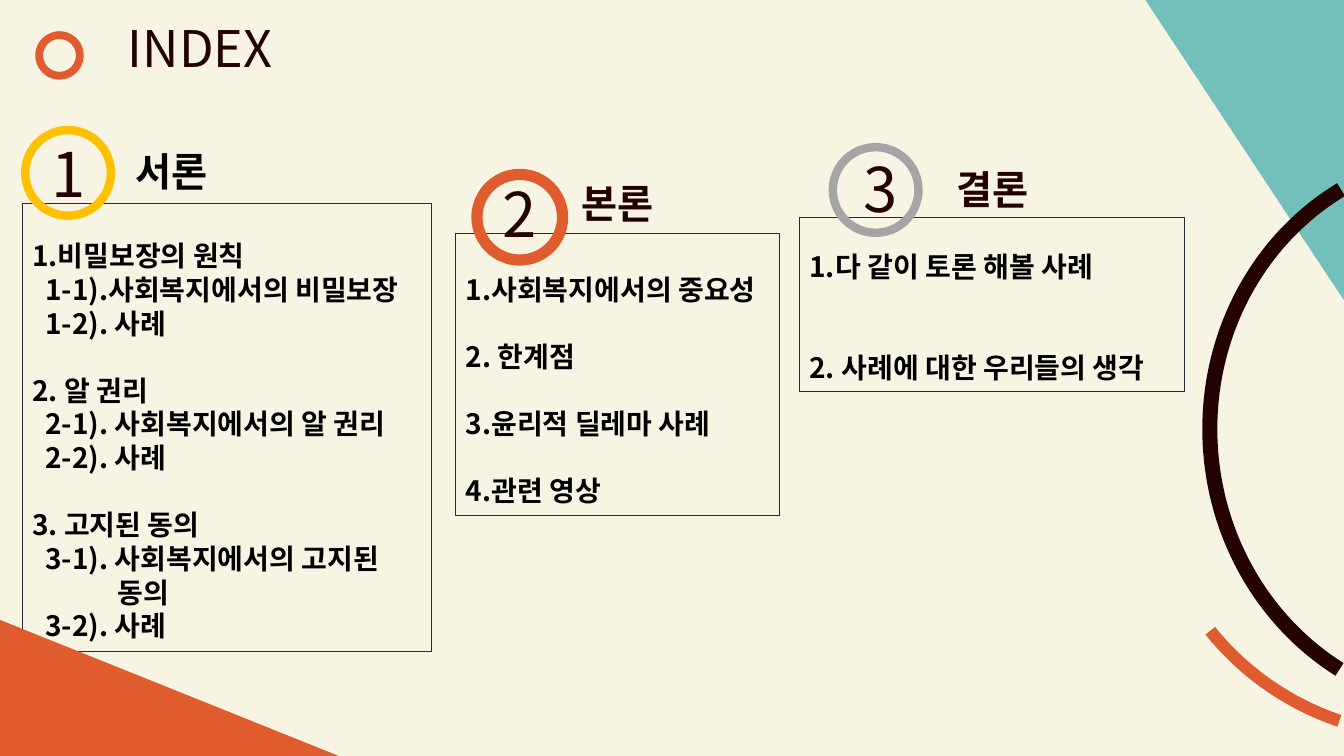
from dataclasses import dataclass

from lxml import etree
from pptx import Presentation
from pptx import util as u
from pptx.dml.color import RGBColor
from pptx.enum import shapes, text
from pptx.oxml.ns import qn

SHAPE = shapes.MSO_SHAPE
ALIGN = text.PP_ALIGN


@dataclass(frozen=True)
class Theme:
    font: str = "Noto Sans CJK KR"
    paper: str = "F7F4E3"
    ink: str = "240202"
    black: str = "000000"
    frame: str = "222A35"
    orange: str = "E05B2E"
    teal: str = "73C0BA"
    yellow: str = "FFC000"
    gray: str = "A5A5A5"
    title: int = 36
    number: int = 44
    heading: int = 28
    body: int = 20


THEME = Theme()
WIDTH, HEIGHT = 13.33, 7.5
LINE = 24  # height of one body line in points

# Each section: panel box, ring box, number box, heading box and its style,
# space above the list, and the entries as (level, space before in lines, words)
SECTIONS = [
    dict(number="1", heading="서론", ring_color=THEME.yellow, ring_width=6,
         panel=(0.22, 2.02, 4.06, 4.44), ring=(0.25, 1.29), number_box=(0.41, 1.3, 0.55),
         heading_box=(1.25, 1.41, 2.11), heading_color=THEME.black,
         heading_align=ALIGN.LEFT, top=0.35,
         entries=[(0, 0, "1.비밀보장의 원칙"),
                  (1, 0, "1-1).사회복지에서의 비밀보장"),
                  (1, 0, "1-2). 사례"),
                  (0, 1, "2. 알 권리"),
                  (1, 0, "2-1). 사회복지에서의 알 권리"),
                  (1, 0, "2-2). 사례"),
                  (0, 1, "3. 고지된 동의"),
                  (1, 0, "3-1). 사회복지에서의 고지된 동의"),
                  (1, 0, "3-2). 사례")]),
    dict(number="2", heading="본론", ring_color=THEME.orange, ring_width=8,
         panel=(4.52, 2.32, 3.21, 2.79), ring=(4.73, 1.73), number_box=(4.75, 1.7, 0.81),
         heading_box=(5.47, 1.73, 1.3), heading_color=THEME.ink,
         heading_align=ALIGN.CENTER, top=0.38,
         entries=[(0, 0, "1.사회복지에서의 중요성"),
                  (0, 1, "2. 한계점"),
                  (0, 1, "3.윤리적 딜레마 사례"),
                  (0, 1, "4.관련 영상")]),
    dict(number="3", heading="결론", ring_color=THEME.gray, ring_width=6,
         panel=(7.93, 2.16, 3.82, 1.72), ring=(8.26, 1.46), number_box=(8.33, 1.45, 0.81),
         heading_box=(9.19, 1.59, 1.3), heading_color=THEME.ink,
         heading_align=ALIGN.CENTER, top=0.32,
         entries=[(0, 0, "1.다 같이 토론 해볼 사례"),
                  (0, 2, "2. 사례에 대한 우리들의 생각")]),
]


def inches(box):
    return [u.Inches(length) for length in box]


def add_figure(slide, kind, box, fill=None, line=None, width=0, adjust=(), rotation=0):
    figure = slide.shapes.add_shape(kind, *inches(box))
    figure.shadow.inherit = False
    figure.rotation = rotation
    for index, value in enumerate(adjust):
        figure.adjustments[index] = value
    if fill:
        figure.fill.solid()
        figure.fill.fore_color.rgb = RGBColor.from_string(fill)
    else:
        figure.fill.background()
    if line:
        figure.line.color.rgb = RGBColor.from_string(line)
        figure.line.width = u.Pt(width)
    else:
        figure.line.fill.background()
    return figure


def write(paragraph, words, size, color, bold=False, align=ALIGN.LEFT):
    paragraph.alignment = align
    run = paragraph.add_run()
    run.text = words
    styling = dict(name=THEME.font, size=u.Pt(size), bold=bold)
    for attribute, value in styling.items():
        setattr(run.font, attribute, value)
    run.font.color.rgb = RGBColor.from_string(color)
    east_asian = etree.SubElement(run.font._element, qn("a:ea"))
    east_asian.set("typeface", THEME.font)


def add_label(slide, box, words, size, color, bold=False, align=ALIGN.CENTER):
    frame = slide.shapes.add_textbox(*inches(box)).text_frame
    frame.word_wrap = True
    write(frame.paragraphs[0], words, size, color, bold, align)


def add_panel(slide, box, entries, top):
    """Framed list; second-level entries hang past their numbers."""
    panel = add_figure(slide, SHAPE.RECTANGLE, box, line=THEME.frame, width=0.75)
    frame = panel.text_frame
    layout = dict(word_wrap=True, vertical_anchor=text.MSO_ANCHOR.TOP,
                  margin_top=u.Inches(top), margin_bottom=0)
    for attribute, value in layout.items():
        setattr(frame, attribute, value)
    for index, (level, gap, words) in enumerate(entries):
        paragraph = frame.add_paragraph() if index else frame.paragraphs[0]
        if gap:
            paragraph.space_before = u.Pt(gap * LINE)
        if level:
            properties = paragraph._p.get_or_add_pPr()
            properties.set("marL", str(u.Inches(0.85)))
            properties.set("indent", str(u.Inches(-0.72)))
        write(paragraph, words, THEME.body, THEME.black, bold=True)


def add_section_head(slide, section):
    add_figure(slide, SHAPE.OVAL, (*section["ring"], 0.85, 0.85),
               line=section["ring_color"], width=section["ring_width"])
    add_label(slide, (*section["number_box"], 0.84), section["number"],
              THEME.number, THEME.ink)
    add_label(slide, (*section["heading_box"], 0.57), section["heading"], THEME.heading,
              section["heading_color"], True, section["heading_align"])


def add_title(slide, left, top):
    add_figure(slide, SHAPE.DONUT, (left, top + 0.19, 0.48, 0.48),
               fill=THEME.orange, adjust=[0.16])
    add_label(slide, (left + 0.4, top, 2.47, 0.71), "INDEX", THEME.title, THEME.ink)


def add_corners(slide):
    add_figure(slide, SHAPE.RIGHT_TRIANGLE, (0, 6.15, 3.51, 1.41), fill=THEME.orange)
    add_figure(slide, SHAPE.RIGHT_TRIANGLE, (WIDTH - 1.97, 0, 1.97, 2.98),
               fill=THEME.teal, rotation=180)


def add_arcs(slide):
    # Start and end are adjustment values: 0.6 to a degree
    for box, turn, ends, color, width in [
        ((11.49, 1.71, 5.51, 5.67), 257.8, (127.46, 146.89), THEME.orange, 8.75),
        ((11.85, 1.67, 5.51, 5.21), 266.4, (127.65, 201.02), THEME.ink, 10.75),
    ]:
        add_figure(slide, SHAPE.ARC, box, line=color, width=width, rotation=turn,
                   adjust=ends)


def build_index(slide):
    slide.background.fill.solid()
    slide.background.fill.fore_color.rgb = RGBColor.from_string(THEME.paper)
    # Lists lie under the corners and section heads
    for section in SECTIONS:
        add_panel(slide, section["panel"], section["entries"], section["top"])
    add_corners(slide)
    add_title(slide, 0.35, 0.12)
    for section in SECTIONS:
        add_section_head(slide, section)
    add_arcs(slide)


def main():
    deck = Presentation()
    deck.slide_width, deck.slide_height = inches((WIDTH, HEIGHT))
    build_index(deck.slides.add_slide(deck.slide_layouts[6]))
    deck.save("out.pptx")


if __name__ == "__main__":
    main()
